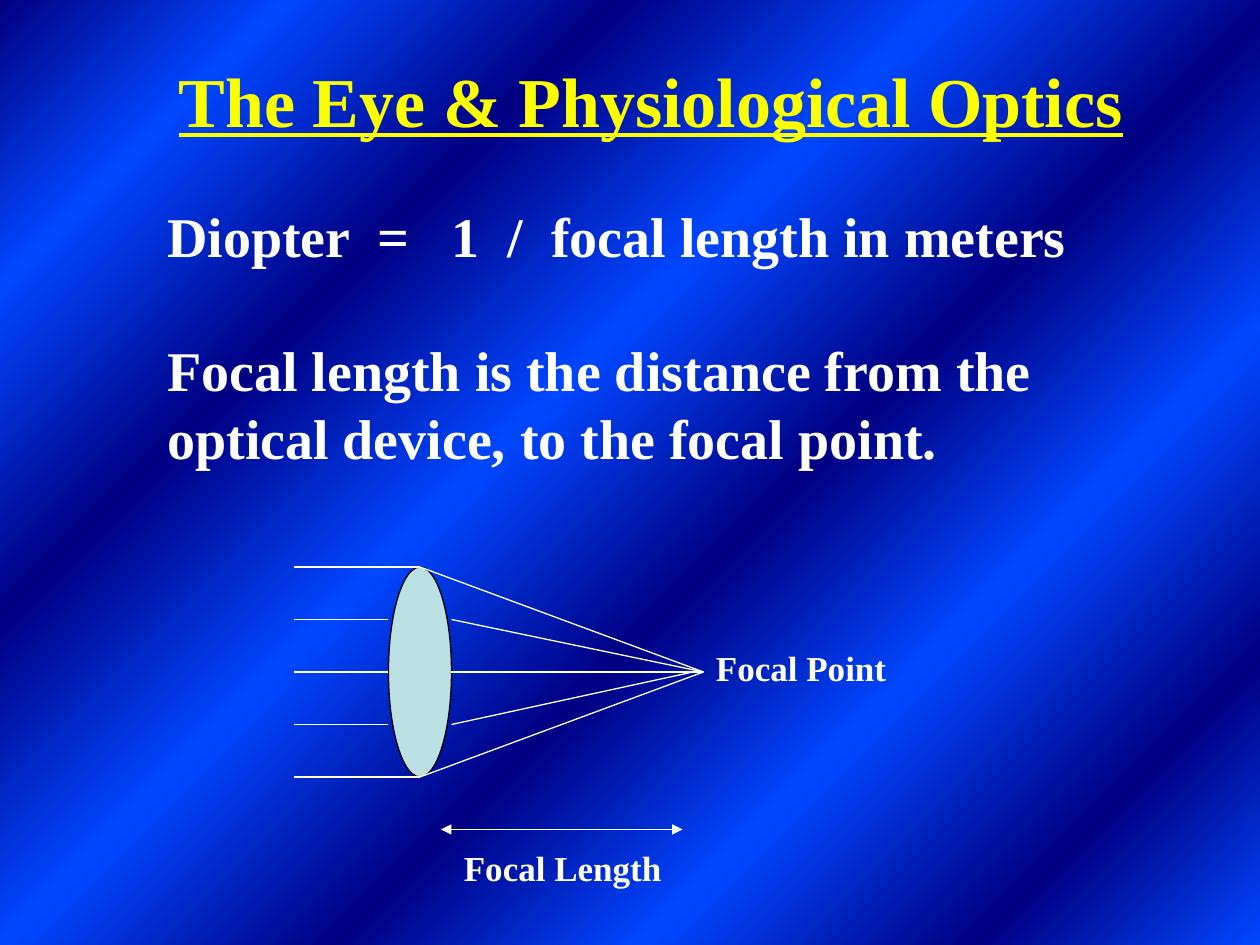
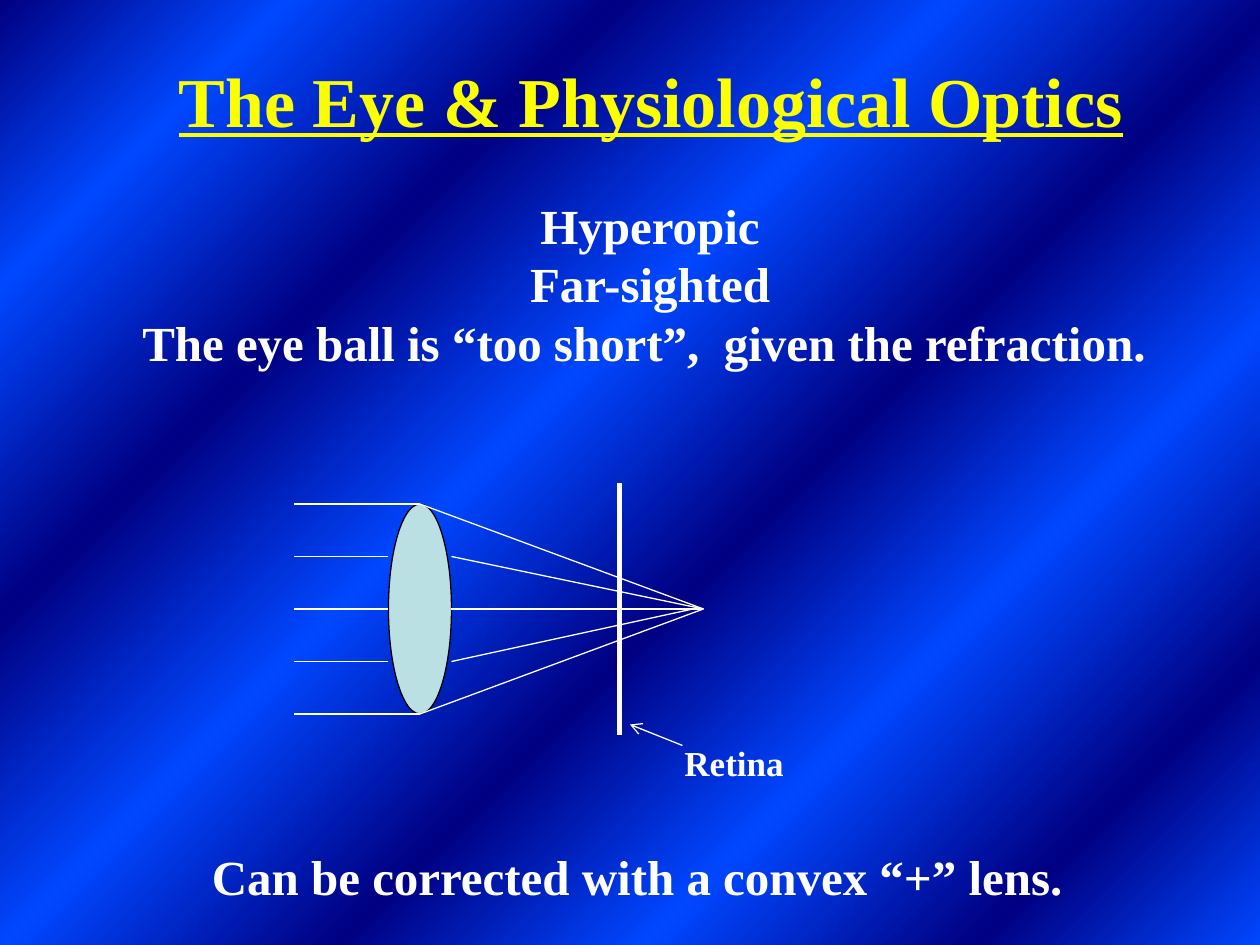
from dataclasses import dataclass

from lxml import etree
from pptx import Presentation
from pptx.dml.color import RGBColor
from pptx.enum import shapes, text
from pptx.oxml.ns import qn
from pptx.util import Pt


@dataclass(frozen=True)
class Theme:
    font: str = "Times New Roman"
    title_color: str = "FBFF00"
    ink: str = "FFFFFF"
    lens_fill: str = "BBE0E3"
    lens_line: str = "000000"
    band_colors: tuple = ("000082", "0047FF")
    band_stops: tuple = (0, 13, 28, 43, 58, 72, 87, 100)
    title_size: float = 40
    definition_size: float = 32
    body_size: float = 28
    label_size: float = 20
    thin: float = 0.75
    thick: float = 3


THEME = Theme()
TITLE = "The Eye & Physiological Optics"

# Lens diagram, horizontal positions and sizes in points
RAY_START = 168
LENS_LEFT, LENS_WIDTH, LENS_HEIGHT = 222, 36, 120
LENS_CENTER = LENS_LEFT + LENS_WIDTH / 2
LENS_RIGHT = LENS_LEFT + LENS_WIDTH
FOCUS_X = 402
RAY_COUNT = 5


def color(value):
    return RGBColor.from_string(value)


def paint_background(slide):
    """Diagonal bands alternating between the two theme blues."""
    fill = slide.background.fill
    fill.gradient()
    fill.gradient_angle = 315
    stop_list = next(slide.element.iter(qn("a:gsLst")))
    for stop in list(stop_list):
        stop_list.remove(stop)
    for index, position in enumerate(THEME.band_stops):
        stop = etree.SubElement(stop_list, qn("a:gs"), pos=str(position * 1000))
        band_color = THEME.band_colors[index % 2]
        etree.SubElement(stop, qn("a:srgbClr"), val=band_color)


def add_text(slide, lines, left, top, width, height, size=THEME.label_size,
             ink=THEME.ink, align=text.PP_ALIGN.LEFT, underline=False,
             wrap=False, anchor=text.MSO_ANCHOR.TOP, gaps=None):
    """Write one paragraph per line; gaps maps a line index to space before."""
    box = slide.shapes.add_textbox(Pt(left), Pt(top), Pt(width), Pt(height))
    frame = box.text_frame
    frame.word_wrap = wrap
    frame.vertical_anchor = anchor
    if not wrap:
        frame.auto_size = text.MSO_AUTO_SIZE.SHAPE_TO_FIT_TEXT
    for index, line in enumerate(lines):
        paragraph = frame.add_paragraph() if index else frame.paragraphs[0]
        paragraph.alignment = align
        if gaps and index in gaps:
            paragraph.space_before = Pt(gaps[index])
        run = paragraph.add_run()
        run.text = line
        font = run.font
        font.name = THEME.font
        font.size = Pt(size)
        font.bold = True
        font.underline = underline
        font.color.rgb = color(ink)


def add_line(slide, start, end, width=THEME.thin, head=None, tail=None):
    """Draw a straight line; head sits at the start, tail at the end."""
    line = slide.shapes.add_connector(
        shapes.MSO_CONNECTOR.STRAIGHT, *(Pt(value) for value in (*start, *end)))
    line.line.color.rgb = color(THEME.ink)
    line.line.width = Pt(width)
    outline = line.line._get_or_add_ln()
    for tag, arrow in (("a:headEnd", head), ("a:tailEnd", tail)):
        if arrow:
            etree.SubElement(outline, qn(tag), type=arrow)
    etree.SubElement(line.element.spPr, qn("a:effectLst"))


def add_lens_diagram(slide, top):
    """Parallel rays entering a lens and meeting at the focal point."""
    lens = slide.shapes.add_shape(
        shapes.MSO_SHAPE.OVAL, Pt(LENS_LEFT), Pt(top), Pt(LENS_WIDTH), Pt(LENS_HEIGHT))
    lens.shadow.inherit = False
    lens.fill.solid()
    lens.fill.fore_color.rgb = color(THEME.lens_fill)
    lens.line.color.rgb = color(THEME.lens_line)
    lens.line.width = Pt(THEME.thin)

    focus_y = top + LENS_HEIGHT / 2
    for index in range(RAY_COUNT):
        y = top + index * LENS_HEIGHT / (RAY_COUNT - 1)
        at_edge = index in (0, RAY_COUNT - 1)
        entry, leave = (LENS_CENTER, LENS_CENTER) if at_edge else (LENS_LEFT, LENS_RIGHT)
        focus_x = FOCUS_X - 6 if index == 3 else FOCUS_X
        add_line(slide, (entry, y), (RAY_START, y))
        add_line(slide, (leave, y), (focus_x, focus_y))


def add_optics_slide(presentation):
    slide = presentation.slides.add_slide(presentation.slide_layouts[6])
    paint_background(slide)
    add_text(slide, [TITLE], 48, 12, 648, 90, size=THEME.title_size,
             ink=THEME.title_color, align=text.PP_ALIGN.CENTER,
             underline=True, wrap=True, anchor=text.MSO_ANCHOR.MIDDLE)
    return slide


def build_diopter_slide(presentation):
    slide = add_optics_slide(presentation)
    add_text(slide, ["Diopter  =   1  /  focal length in meters",
                     "Focal length is the distance from the",
                     "optical device, to the focal point."],
             88.5, 111.6, 528.5, 160.5, size=THEME.definition_size, gaps={1: 38.4})
    add_lens_diagram(slide, 324)
    add_text(slide, ["Focal Point"], 402, 366, 111.6, 31)
    add_text(slide, ["Focal Length"], 258, 480, 127.4, 31)
    add_line(slide, (252, 474), (390, 474), head="triangle", tail="triangle")


def build_hyperopic_slide(presentation):
    slide = add_optics_slide(presentation)
    add_text(slide, ["Hyperopic", "Far-sighted",
                     "The eye ball is “too short”,  given the refraction. "],
             73.5, 108, 596, 108, size=THEME.body_size, align=text.PP_ALIGN.CENTER)
    add_lens_diagram(slide, 288)
    add_text(slide, ["Retina"], 384, 420, 71.3, 31)
    add_line(slide, (354, 276), (354, 420), width=THEME.thick)
    add_line(slide, (390, 426), (360, 414), tail="arrow")
    add_text(slide, ["Can be corrected with a convex “+” lens."],
             114, 480, 501.8, 41, size=THEME.body_size)


def main():
    presentation = Presentation()
    presentation.slide_width, presentation.slide_height = Pt(720), Pt(540)
    build_diopter_slide(presentation)
    build_hyperopic_slide(presentation)
    presentation.save("out.pptx")


if __name__ == "__main__":
    main()
